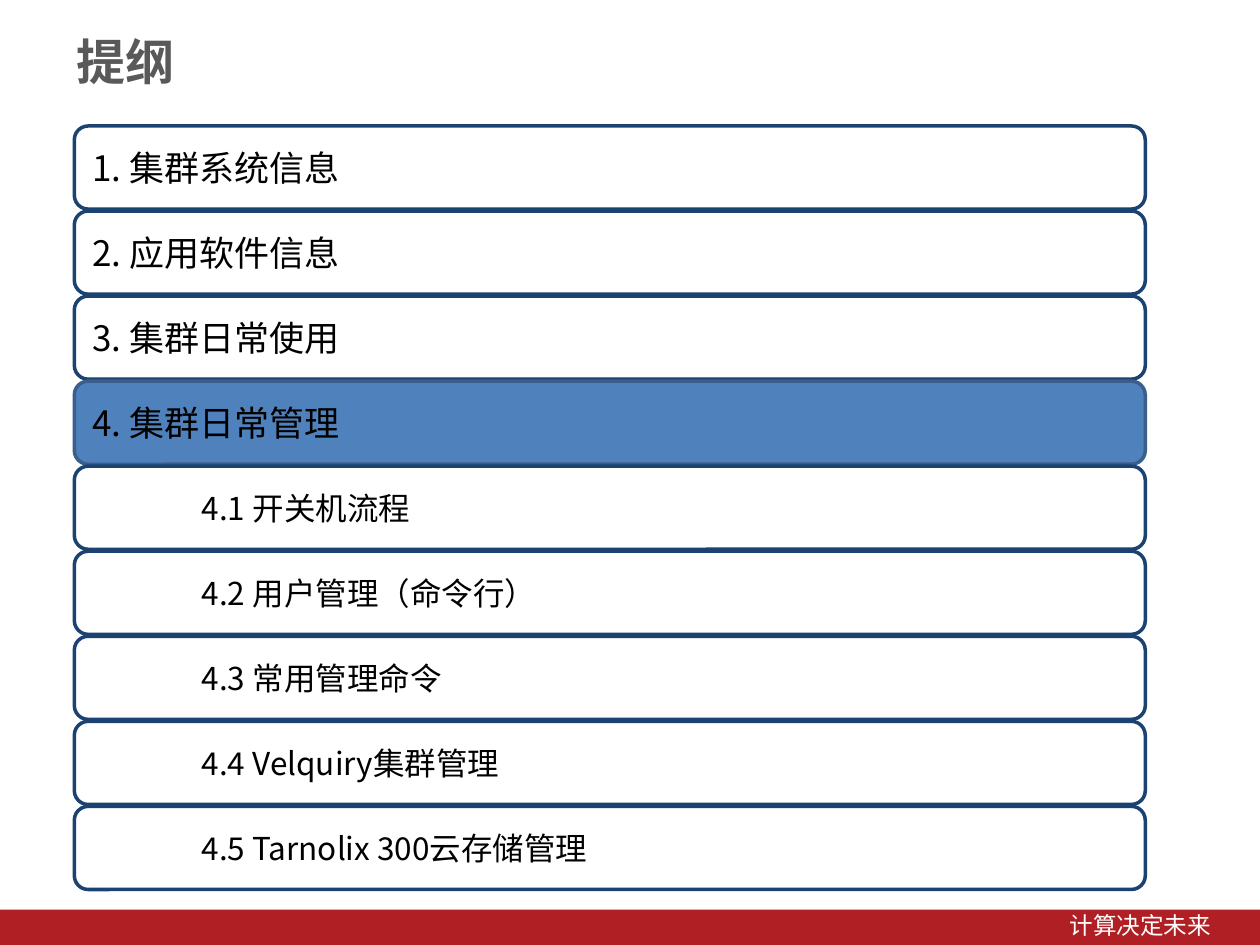
from dataclasses import dataclass

from pptx import Presentation
from pptx import util as u
from pptx.dml.color import RGBColor
from pptx.enum import shapes, text
from pptx.oxml.ns import qn
from pptx.slide import Slide
from pptx.text.text import TextFrame


@dataclass(frozen=True)
class Theme:
    font: str = "Noto Sans CJK SC"
    title_size: float = 28
    chapter_size: float = 20
    section_size: float = 18
    footer_size: float = 13.5
    title: str = "595959"
    ink: str = "000000"
    paper: str = "FFFFFF"
    border: str = "1C4271"
    current_fill: str = "4F81BD"
    current_border: str = "3A5F8C"
    footer: str = "B01F24"


@dataclass(frozen=True)
class Entry:
    label: str
    is_section: bool = False
    is_current: bool = False


@dataclass(frozen=True)
class Box:
    left: float
    top: float
    width: float
    height: float

    def lengths(self) -> list[u.Length]:
        return [u.Inches(n) for n in (self.left, self.top, self.width, self.height)]


THEME = Theme()
ENTRIES = [
    Entry("1. 集群系统信息"),
    Entry("2. 应用软件信息"),
    Entry("3. 集群日常使用"),
    Entry("4. 集群日常管理", is_current=True),
    Entry("4.1 开关机流程", is_section=True),
    Entry("4.2 用户管理（命令行）", is_section=True),
    Entry("4.3 常用管理命令", is_section=True),
    Entry("4.4 Velquiry集群管理", is_section=True),
    Entry("4.5 Tarnolix 300云存储管理", is_section=True),
]
FIRST_ROW = Box(0.59, 1, 8.5, 0.66)
ROW_PITCH = 0.675
SECTION_INDENT = 0.88


def write(frame: TextFrame, words: str, size: float, color: str,
          align: text.PP_ALIGN = text.PP_ALIGN.LEFT, bold: bool = False,
          **frame_format) -> None:
    """Fill a frame with one line, in the theme font for Latin and Chinese."""
    for name, value in {"word_wrap": True, **frame_format}.items():
        setattr(frame, name, value)
    paragraph = frame.paragraphs[0]
    paragraph.alignment = align
    run = paragraph.add_run()
    run.text = words
    font_format = {"name": THEME.font, "size": u.Pt(size), "bold": bold}
    for name, value in font_format.items():
        setattr(run.font, name, value)
    run.font.color.rgb = RGBColor.from_string(color)
    east_asian = run.font._element.makeelement(qn("a:ea"), {"typeface": THEME.font})
    run.font._element.find(qn("a:latin")).addnext(east_asian)


def add_panel(slide: Slide, kind: shapes.MSO_SHAPE, box: Box, fill: str,
              border: str | None = None):
    panel = slide.shapes.add_shape(kind, *box.lengths())
    panel.shadow.inherit = False
    panel.fill.solid()
    panel.fill.fore_color.rgb = RGBColor.from_string(fill)
    if border:
        panel.line.color.rgb = RGBColor.from_string(border)
        panel.line.width = u.Pt(2)
    else:
        panel.line.fill.background()
    return panel


def add_entry(slide: Slide, entry: Entry, box: Box) -> None:
    fill, border = THEME.paper, THEME.border
    if entry.is_current:
        fill, border = THEME.current_fill, THEME.current_border
    row = add_panel(slide, shapes.MSO_SHAPE.ROUNDED_RECTANGLE, box, fill, border)
    size = THEME.section_size if entry.is_section else THEME.chapter_size
    inset = 0.1 + SECTION_INDENT if entry.is_section else 0.11
    write(row.text_frame, entry.label, size, THEME.ink,
          vertical_anchor=text.MSO_ANCHOR.MIDDLE, margin_left=u.Inches(inset))


def add_footer(slide: Slide) -> None:
    add_panel(slide, shapes.MSO_SHAPE.RECTANGLE, Box(0, 7.22, 10, 0.28), THEME.footer)
    motto = slide.shapes.add_textbox(*Box(7.82, 7.2, 1.85, 0.29).lengths())
    write(motto.text_frame, "计算决定未来", THEME.footer_size, THEME.paper,
          text.PP_ALIGN.RIGHT, margin_right=u.Inches(0.06),
          margin_top=u.Inches(0.03), margin_bottom=u.Inches(0.03))


def main() -> None:
    deck = Presentation()
    deck.slide_width, deck.slide_height = u.Inches(10), u.Inches(7.5)
    slide = deck.slides.add_slide(deck.slide_layouts[6])
    add_footer(slide)
    title = slide.shapes.add_textbox(*Box(0.51, 0.25, 7.21, 0.62).lengths())
    write(title.text_frame, "提纲", THEME.title_size, THEME.title, bold=True,
          margin_top=u.Inches(0))
    for index, entry in enumerate(ENTRIES):
        top = FIRST_ROW.top + index * ROW_PITCH
        add_entry(slide, entry, Box(FIRST_ROW.left, top, FIRST_ROW.width, FIRST_ROW.height))
    deck.save("out.pptx")


if __name__ == "__main__":
    main()
